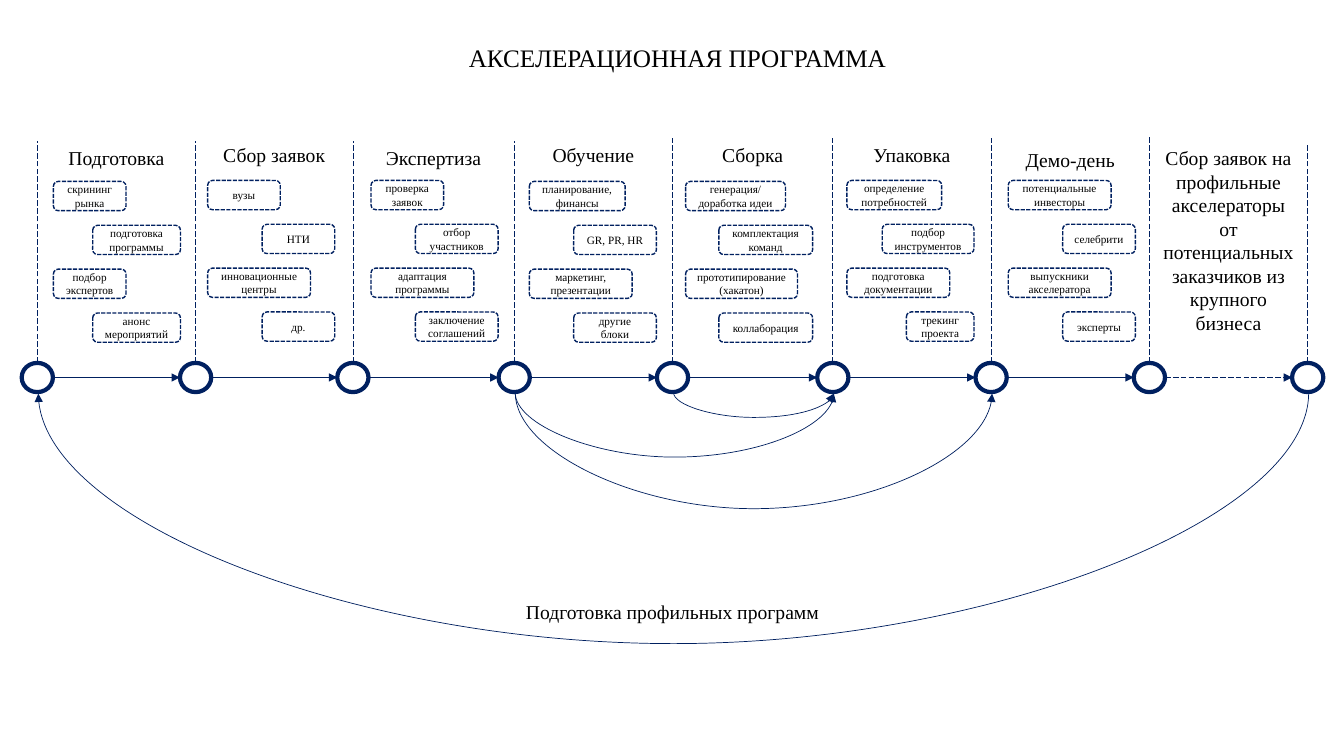
import collections
import dataclasses
import itertools

import pptx
import pptx.dml.color
import pptx.enum.dml
import pptx.enum.shapes
import pptx.enum.text
import pptx.oxml.ns
import pptx.oxml.xmlchemy
import pptx.util

SHAPE = pptx.enum.shapes.MSO_SHAPE
LINK = pptx.enum.shapes.MSO_CONNECTOR
DASH = pptx.enum.dml.MSO_LINE
ANCHOR = pptx.enum.text.MSO_ANCHOR
FIT = pptx.enum.text.MSO_AUTO_SIZE
Box = collections.namedtuple("Box", "x y w h")
Stage = collections.namedtuple("Stage", "name head left top items")

# The slide is a grid of 1333 columns by 750 rows, each 0.01 inch
COLS, ROWS = 1333, 750
BAND, CHIP, STEP = 126, 29, 43.5
NODE_W, NODE_H = 31, 29


@dataclasses.dataclass(frozen=True)
class Theme:
    font: str = "Times New Roman"
    ink: str = "000000"
    navy: str = "002060"
    title: int = 18
    head: int = 14
    note: int = 8
    ring: float = 3
    edge: float = 1
    thin: float = 0.5


THEME = Theme()
NODES = [37, 194, 350, 510, 667, 826, 983, 1140, 1297]
RULES = [4, 4, 4, 4, 1, 1, 1, 0, 6]  # top of each divider within the stage row

# Name, heading row, chip column, chip row, chips with their widths
STAGES = [
    Stage("Подготовка", 4, 16, 44, [
        ("скрининг рынка", 72), ("подготовка программы", 87),
        ("подбор экспертов", 72), ("анонс мероприятий", 87)]),
    Stage("Сбор заявок", 1, 12, 43, [
        ("вузы", 72), ("НТИ", 72), ("инновационные центры", 102), ("др.", 72)]),
    Stage("Экспертиза", 4, 18, 43, [
        ("проверка заявок", 72), ("отбор участников", 82),
        ("адаптация программы", 102), ("заключение соглашений", 82)]),
    Stage("Обучение", 1, 15, 44, [
        ("планирование, финансы", 95), ("GR, PR, HR", 82),
        ("маркетинг, презентации", 102), ("другие блоки", 82)]),
    Stage("Сборка", 1, 13, 44, [
        ("генерация/ доработка идеи", 99), ("комплектация команд", 93),
        ("прототипирование (хакатон)", 111), ("коллаборация", 93)]),
    Stage("Упаковка", 1, 14, 43, [
        ("определение потребностей", 94), ("подбор инструментов", 91),
        ("подготовка документации", 102), ("трекинг проекта", 67)]),
    Stage("Демо-день", 6, 17, 43, [
        ("потенциальные инвесторы", 102), ("селебрити", 72),
        ("выпускники акселератора", 102), ("эксперты", 72)]),
    Stage("Сбор заявок на профильные акселераторы от потенциальных "
          "заказчиков из крупного бизнеса", 4, 0, 0, []),
]

# First node, last node, depth of the bow
LOOPS = [(8, 0, 253), (3, 6, 117), (3, 5, 65), (4, 5, 25)]


def grid(*cells):
    return [pptx.util.Inches(cell / 100) for cell in cells]


def write(frame, text, size, anchor=ANCHOR.TOP, fit=FIT.NONE):
    frame.word_wrap = True
    frame.auto_size = fit
    frame.vertical_anchor = anchor
    para = frame.paragraphs[0]
    para.alignment = pptx.enum.text.PP_ALIGN.CENTER
    run = para.add_run()
    run.text = text
    run.font.name = THEME.font
    run.font.size = pptx.util.Pt(size)
    run.font.color.rgb = pptx.dml.color.RGBColor.from_string(THEME.ink)


def label(slide, box, text):
    area = slide.shapes.add_textbox(*grid(*box))
    write(area.text_frame, text, THEME.head, fit=FIT.SHAPE_TO_FIT_TEXT)


def stroke(line, width, dash=None):
    line.color.rgb = pptx.dml.color.RGBColor.from_string(THEME.navy)
    line.width = pptx.util.Pt(width)
    if dash:
        line.dash_style = dash


def shape(slide, kind, box, width, dash=None):
    item = slide.shapes.add_shape(kind, *grid(*box))
    item.shadow.inherit = False
    item.fill.background()
    stroke(item.line, width, dash)
    return item


def link(slide, start, end, kind=LINK.STRAIGHT, dash=None, arrow=True):
    item = slide.shapes.add_connector(kind, *grid(*start, *end))
    stroke(item.line, THEME.thin, dash)
    props = item._element.spPr
    if arrow:
        tail = pptx.oxml.xmlchemy.OxmlElement("a:tailEnd")
        tail.set("type", "triangle")
        props.find(pptx.oxml.ns.qn("a:ln")).append(tail)
    props.append(pptx.oxml.xmlchemy.OxmlElement("a:effectLst"))
    return item


def bow(slide, first, last, y, depth):
    # A one-unit-wide curve, turned so that it hangs below the axis
    mid, half = (first + last) / 2, abs(last - first) / 2
    side = 0.5 if first < last else -0.5
    item = link(slide, (mid + side, y - half), (mid - side, y + half), LINK.CURVE)
    props = item._element.spPr
    turn = 270 if first < last else 90
    props.find(pptx.oxml.ns.qn("a:xfrm")).set("rot", str(turn * 60000))
    guide = pptx.oxml.xmlchemy.OxmlElement("a:gd")
    guide.set("name", "adj1")
    guide.set("fmla", f"val {depth * 100000}")
    shape_def = props.find(pptx.oxml.ns.qn("a:prstGeom"))
    shape_def.get_or_add_avLst().append(guide)


def header(slide, box):
    title = slide.shapes.title
    title.left, title.top, title.width, title.height = grid(*box)
    write(title.text_frame, "АКСЕЛЕРАЦИОННАЯ ПРОГРАММА", THEME.title)


def column(slide, box, stage):
    # Heading
    lines = 34 if stage.items else 199
    label(slide, Box(box.x + 2, box.y + stage.head, box.w - 4, lines), stage.name)
    # Chips sit by turns at the left and right of a band
    for row, (text, width) in enumerate(stage.items):
        shift = BAND - width if row % 2 else 0
        place = Box(box.x + stage.left + shift,
                    box.y + stage.top + row * STEP, width, CHIP)
        chip = shape(slide, SHAPE.ROUNDED_RECTANGLE, place,
                     THEME.edge, DASH.SQUARE_DOT)
        write(chip.text_frame, text, THEME.note, ANCHOR.MIDDLE)


def stages(slide, box):
    for x, top in zip(NODES, RULES):
        link(slide, (x, box.y + box.h), (x, box.y + top),
             dash=DASH.LONG_DASH, arrow=False)
    for (x, after), stage in zip(itertools.pairwise(NODES), STAGES):
        column(slide, Box(x, box.y, after - x, box.h), stage)


def axis(slide, box):
    half, mid = NODE_W / 2, box.y + box.h / 2
    for x in NODES:
        shape(slide, SHAPE.OVAL, Box(x - half, box.y, NODE_W, NODE_H), THEME.ring)
    for x, after in itertools.pairwise(NODES):
        dash = DASH.LONG_DASH if after == NODES[-1] else None
        link(slide, (x + half, mid), (after - half, mid), dash=dash)


def loops(slide, box):
    for first, last, depth in LOOPS:
        bow(slide, NODES[first] + 1, NODES[last] + 1, box.y, depth)
    label(slide, Box(box.x + 449, box.y + 200, 362, 34),
          "Подготовка профильных программ")


def main():
    deck = pptx.Presentation()
    deck.slide_width, deck.slide_height = grid(COLS, ROWS)
    slide = deck.slides.add_slide(deck.slide_layouts[5])
    for item in list(slide.placeholders):
        if item != slide.shapes.title:
            item._element.getparent().remove(item._element)
    span = NODES[-1] - NODES[0]
    header(slide, Box(63, 37, 1218, 40))
    stages(slide, Box(NODES[0], 136, span, 224))
    axis(slide, Box(NODES[0], 360, span, NODE_H))
    loops(slide, Box(NODES[0], 390, span, 253))
    deck.save("out.pptx")


if __name__ == "__main__":
    main()
